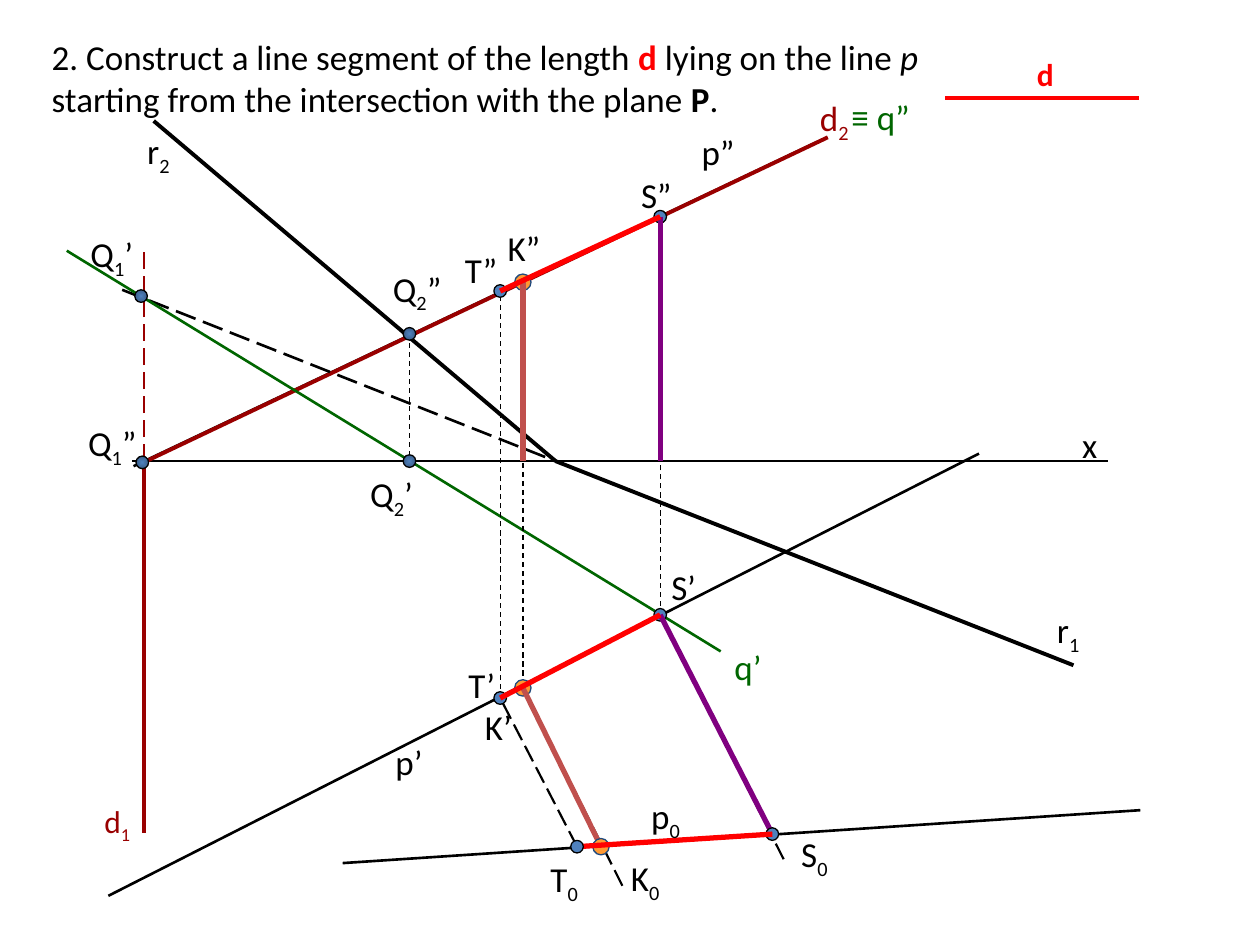
from lxml.etree import SubElement
from pptx import Presentation
from pptx.dml.color import RGBColor
from pptx.enum.dml import MSO_LINE_DASH_STYLE as DASH
from pptx.enum.shapes import MSO_CONNECTOR, MSO_SHAPE
from pptx.enum.text import MSO_ANCHOR, MSO_AUTO_SIZE, PP_ALIGN
from pptx.oxml.ns import qn
from pptx.util import Inches, Pt

BLACK = RGBColor(0, 0, 0)
RED = RGBColor(0xFF, 0, 0)
MAROON = RGBColor(0x99, 0, 0)
GREEN = RGBColor(0, 0x66, 0)
PURPLE = RGBColor(0x80, 0, 0x80)
BRICK = RGBColor(0xC0, 0x50, 0x4D)
BLUE = RGBColor(0x4F, 0x81, 0xBD)
DEEP_BLUE = RGBColor(0x39, 0x5C, 0x87)
NAVY = RGBColor(0x1F, 0x49, 0x7D)
ORANGE = RGBColor(0xFF, 0x99, 0x33)

AXIS_Y = 3.66
POINTS = {
    "Q1'": (1.12, 2.35), "Q1''": (1.13, 3.67),
    "Q2'": (3.25, AXIS_Y), "Q2''": (3.25, 2.65),
    "S'": (5.24, 4.88), "S''": (5.24, 1.72), "S0": (6.13, 6.62),
    "K'": (4.15, 5.46), "K''": (4.15, 2.24), "K0": (4.77, 6.72),
    "T'": (3.97, 5.54), "T''": (3.97, 2.31), "T0": (4.58, 6.72),
    "trace vertex": (4.41, AXIS_Y),
    "S axis": (5.24, AXIS_Y), "K axis": (4.15, AXIS_Y),
}

TITLE = [
    ("2. Construct a line segment of the length ", {}),
    ("d ", {"bold": True, "color": RED}),
    ("lying on the line ", {}),
    ("p ", {"italic": True}),
    ("starting from the intersection with the plane ", {}),
    ("P", {"bold": True}),
    (".", {}),
]

CONSTRUCTION = [
    ((1.05, AXIS_Y), (8.79, AXIS_Y), BLACK, 0.75, None),
    ((1.22, 0.96), "trace vertex", BLACK, 2.25, None),
    ("trace vertex", (8.52, 5.28), BLACK, 2.25, None),
    ((1.06, 3.7), (6.5, 1.12), BLACK, 1.5, None),
    ((0.86, 7.11), (7.77, 3.6), BLACK, 1.5, None),
    ((1.14, 3.65), (1.14, 6.61), MAROON, 2.25, None),
    ((1.14, 3.67), (6.57, 1.09), MAROON, 2.25, None),
    ((1.14, 3.66), (1.14, 2), MAROON, 1.25, DASH.LONG_DASH),
    ((0.97, 2.3), "trace vertex", BLACK, 1.5, DASH.LONG_DASH),
    ("Q2''", "Q2'", BLACK, 0.75, DASH.DASH),
    ((7.5, 0.78), (9.04, 0.78), RED, 2.25, None),
    ((0.53, 1.99), (5.72, 5.17), GREEN, 1.5, None),
    ("S'", "S''", BLACK, 0.75, DASH.DASH),
    ("K''", "K'", BLACK, 0.75, DASH.DASH),
    ("T'", "T''", BLACK, 0.75, DASH.DASH),
    ((6.22, 6.82), "S'", BLACK, 1.25, DASH.LONG_DASH),
    ((4.94, 7.03), "K'", BLACK, 1.25, DASH.LONG_DASH),
    ("T0", "T'", BLACK, 1.25, DASH.LONG_DASH),
    ((2.72, 6.85), (9.05, 6.43), BLACK, 1.5, None),
]
HEIGHTS = [
    ("S''", "S axis", PURPLE, 3, None),
    ("S'", "S0", PURPLE, 3, None),
    ("K''", "K axis", BRICK, 3, None),
    ("K'", "K0", BRICK, 3, None),
]
SEGMENT_D = [(f"S{view}", f"T{view}", RED, 3, None) for view in ("''", "'", "0")]

PLAIN = (0.1, BLUE, None, BLACK)
SHADED = (0.1, BLUE, DEEP_BLUE, BLACK)
AMBER = (0.13, ORANGE, None, NAVY)
DOT_STYLES = {"Q": SHADED, "S": PLAIN, "T": PLAIN, "K": AMBER}
PROJECTED_DOTS = [letter + view for letter in ("Q1", "Q2", "S", "K", "T")
                  for view in ("'", "''")]

LABELS = [
    (1.07, 0.98, 0.45, "r", "2", "", BLACK, 20),
    (8.29, 4.78, 0.48, "r", "1", "", BLACK, 20),
    (8.49, 3.31, 0.34, "x", "", "", BLACK, 20),
    (3.04, 5.83, 0.42, "p’", "", "", BLACK, 20),
    (5.47, 0.99, 0.5, "p”", "", "", BLACK, 20),
    (6.41, 0.72, 0.6, "d", "2", "", MAROON, 20),
    (0.73, 6.32, 0.5, "d", "1", "", MAROON, 18),
    (0.62, 1.8, 0.7, "Q", "1", "’", BLACK, 20),
    (0.6, 3.3, 0.61, "Q", "1", "”", BLACK, 20),
    (3.02, 2.07, 0.64, "Q", "2", "”", BLACK, 20),
    (2.84, 3.7, 0.56, "Q", "2", "’", BLACK, 20),
    (5.73, 5.07, 0.45, "q’", "", "", GREEN, 20),
    (6.66, 0.71, 1, "≡ q”", "", "", GREEN, 20),
    (5.23, 4.44, 0.47, "S’", "", "", BLACK, 20),
    (4.99, 1.33, 0.52, "S”", "", "", BLACK, 20),
    (6.26, 6.56, 0.48, "S", "0", "", BLACK, 20),
    (3.75, 5.55, 0.74, "K’", "", "", BLACK, 20),
    (3.93, 1.75, 0.64, "K”", "", "", BLACK, 20),
    (4.91, 6.75, 0.54, "K", "0", "", BLACK, 20),
    (5.07, 6.26, 0.54, "p", "0", "", BLACK, 20),
    (4.27, 6.76, 0.49, "T", "0", "", BLACK, 20),
    (3.62, 5.22, 0.53, "T’", "", "", BLACK, 20),
    (3.59, 1.92, 0.51, "T”", "", "", BLACK, 20),
]


def add_text(paragraph, text, size=20, color=BLACK, bold=False, italic=False,
             subscript=False):
    run = paragraph.add_run()
    run.text = text
    font = run.font
    font.name, font.size = "Calibri", Pt(size)
    font.bold, font.italic = bold, italic
    font.color.rgb = color
    if subscript:
        run._r.get_or_add_rPr().set("baseline", "-25000")


def add_label(slide, left, top, width, height=0.44):
    label = slide.shapes.add_textbox(*map(Inches, (left, top, width, height)))
    label.text_frame.word_wrap = True
    return label.text_frame.paragraphs[0]


def draw_segments(slide, segments):
    for start, end, color, weight, dash in segments:
        ends = [*POINTS.get(start, start), *POINTS.get(end, end)]
        segment = slide.shapes.add_connector(MSO_CONNECTOR.STRAIGHT, *map(Inches, ends))
        segment.line.color.rgb = color
        segment.line.width = Pt(weight)
        if dash:
            segment.line.dash_style = dash
        SubElement(segment._element.spPr, qn("a:effectLst"))


def shade_from_centre(dot, inner, outer):
    dot.fill.gradient()
    for stop, color in zip(dot.fill.gradient_stops, (inner, outer)):
        stop.color.rgb = color
    gradient = dot._element.spPr.find(qn("a:gradFill"))
    gradient.remove(gradient.find(qn("a:lin")))
    shade = SubElement(gradient, qn("a:path"), {"path": "shape"})
    SubElement(shade, qn("a:fillToRect"), dict.fromkeys("ltrb", "50000"))


def draw_dots(slide, names):
    for name in names:
        size, inner, outer, outline = DOT_STYLES[name[0]]
        x, y = POINTS[name]
        box = (x - size / 2, y - size / 2, size, size)
        dot = slide.shapes.add_shape(MSO_SHAPE.OVAL, *map(Inches, box))
        dot.shadow.inherit = False
        dot.line.color.rgb = outline
        dot.line.width = Pt(0.75)
        if outer:
            shade_from_centre(dot, inner, outer)
        else:
            dot.fill.solid()
            dot.fill.fore_color.rgb = inner


def main():
    deck = Presentation()
    deck.slide_width, deck.slide_height = Inches(10), Inches(7.5)
    slide = deck.slides.add_slide(deck.slide_layouts[5])

    title = slide.shapes.title
    title.left, title.top = Inches(0.31), Inches(0.23)
    title.width, title.height = Inches(7.34), Inches(0.47)
    frame = title.text_frame
    frame.word_wrap = True
    frame.auto_size = MSO_AUTO_SIZE.NONE
    frame.vertical_anchor = MSO_ANCHOR.TOP
    frame.paragraphs[0].alignment = PP_ALIGN.LEFT
    for text, style in TITLE:
        add_text(frame.paragraphs[0], text, **style)

    draw_segments(slide, CONSTRUCTION)
    draw_dots(slide, PROJECTED_DOTS)
    draw_segments(slide, HEIGHTS)
    draw_dots(slide, ["S0", "K0"])
    draw_segments(slide, SEGMENT_D)
    draw_dots(slide, ["T0"])

    for left, top, width, letter, index, mark, color, size in LABELS:
        paragraph = add_label(slide, left, top, width)
        add_text(paragraph, letter, size=size, color=color)
        if index:
            add_text(paragraph, index, size=size, color=color, subscript=True)
        if mark:
            add_text(paragraph, mark, size=size, color=color)
    add_text(add_label(slide, 8.13, 0.39, 0.39, 0.4), "d", size=18, color=RED, bold=True)

    deck.save("out.pptx")


if __name__ == "__main__":
    main()
